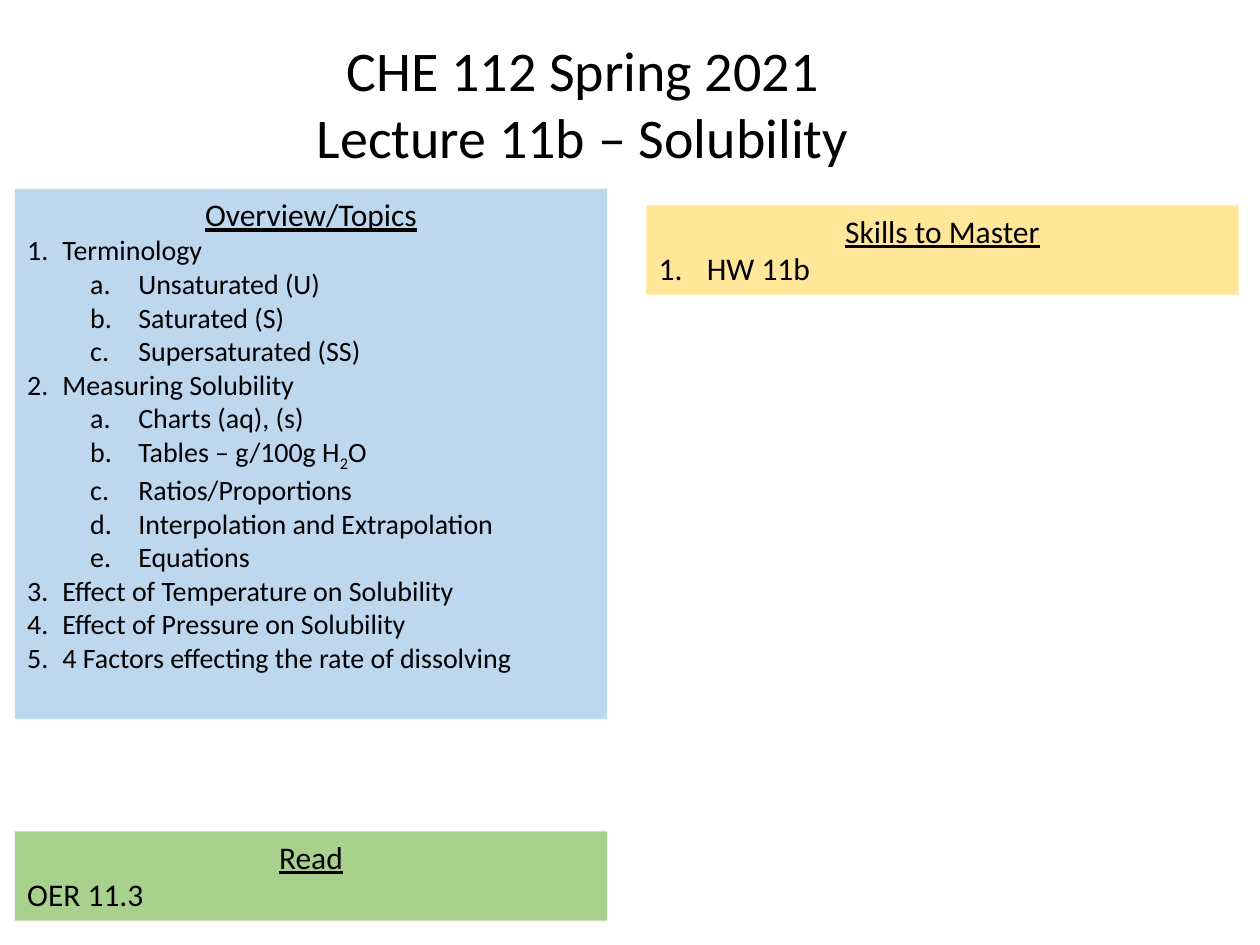
"""Build the lecture overview slide with its topic, skill and reading panels."""
from dataclasses import dataclass

from lxml import etree
from pptx import Presentation
from pptx import util as u
from pptx.dml.color import RGBColor
from pptx.enum import shapes, text
from pptx.oxml import ns


@dataclass
class Item:
    words: str
    scheme: str = ""
    left: float = 0
    hang: float = 0
    level: int = 0


@dataclass
class Panel:
    head: str
    items: list[Item]
    left: float
    top: float
    high: float
    fill: str
    size: int = 18


WIDE = 11.94
LEFT, RIGHT = 0.3, 13.03
NUMBER, LETTER = "arabicPeriod", "alphaLcPeriod"


def topic(words: str) -> Item:
    return Item(words, NUMBER, 0.71, 0.71)


def detail(words: str) -> Item:
    return Item(words, LETTER, 2.24, 0.97, 1)


PANELS = [
    Panel("Overview/Topics", [
        topic("Terminology"),
        detail("Unsaturated (U)"),
        detail("Saturated (S)"),
        detail("Supersaturated (SS)"),
        topic("Measuring Solubility"),
        detail("Charts (aq), (s)"),
        detail("Tables – g/100g H~2~O"),
        detail("Ratios/Proportions"),
        detail("Interpolation and Extrapolation"),
        detail("Equations"),
        topic("Effect of Temperature on Solubility"),
        topic("Effect of Pressure on Solubility"),
        topic("4 Factors effecting the rate of dissolving"),
    ], LEFT, 3.81, 10.69, "BDD7EE", 16),
    Panel("Skills to Master", [Item("HW 11b", NUMBER, 0.97, 0.97)],
          RIGHT, 4.14, 1.8, "FFE699"),
    Panel("Read", [Item("OER 11.3")], LEFT, 16.76, 1.8, "A9D18E"),
]


def color(code: str) -> RGBColor:
    return RGBColor.from_string(code)


def write(para, words: str, *, size: int = 18, line: bool = False,
          align=text.PP_ALIGN.LEFT) -> None:
    """Fill a paragraph, lowering each part set between tildes."""
    para.alignment = align
    for spot, part in enumerate(words.split("~")):
        run = para.add_run()
        run.text = part
        font = run.font
        font.name, font.size, font.underline = "Calibri", u.Pt(size), line
        font.color.rgb = color("000000")
        if spot % 2:
            run._r.get_or_add_rPr().set("baseline", "-25000")


def number(para, item: Item) -> None:
    """Give a paragraph its level, hanging indent and automatic number."""
    para.level = item.level
    props = para._p.get_or_add_pPr()
    props.set("marL", str(u.Cm(item.left)))
    props.set("indent", str(-u.Cm(item.hang)))
    etree.SubElement(props, ns.qn("a:buAutoNum"), type=item.scheme)


def place(shape, left: float, top: float, wide: float, high: float) -> None:
    shape.left, shape.top = u.Cm(left), u.Cm(top)
    shape.width, shape.height = u.Cm(wide), u.Cm(high)


def draw(slide, panel: Panel) -> None:
    """Draw one filled panel with a centred heading and its items."""
    box = slide.shapes.add_shape(
        shapes.MSO_SHAPE.RECTANGLE, u.Cm(panel.left), u.Cm(panel.top),
        u.Cm(WIDE), u.Cm(panel.high))
    box.shadow.inherit = False
    box.fill.solid()
    box.fill.fore_color.rgb = color(panel.fill)
    box.line.fill.background()
    frame = box.text_frame
    frame.word_wrap = True
    frame.vertical_anchor = text.MSO_ANCHOR.TOP
    write(frame.paragraphs[0], panel.head, line=True,
          align=text.PP_ALIGN.CENTER)
    for item in panel.items:
        para = frame.add_paragraph()
        write(para, item.words, size=panel.size)
        if item.scheme:
            number(para, item)


def name(slide, lines: list[str]) -> None:
    """Place the title and write its centred lines."""
    title = slide.shapes.title
    place(title, 6.1, 0.58, 11.3, 3)
    frame = title.text_frame
    frame.word_wrap = False
    frame.auto_size = text.MSO_AUTO_SIZE.NONE
    frame.vertical_anchor = text.MSO_ANCHOR.TOP
    for spot, words in enumerate(lines):
        para = frame.add_paragraph() if spot else frame.paragraphs[0]
        write(para, words, size=32, align=text.PP_ALIGN.CENTER)


def main() -> None:
    deck = Presentation()
    deck.slide_width, deck.slide_height = u.Cm(25.4), u.Cm(19.05)
    slide = deck.slides.add_slide(deck.slide_layouts[5])
    for panel in PANELS:
        draw(slide, panel)
    name(slide, ["CHE 112 Spring 2021", "Lecture 11b – Solubility"])
    deck.save("out.pptx")


if __name__ == "__main__":
    main()
